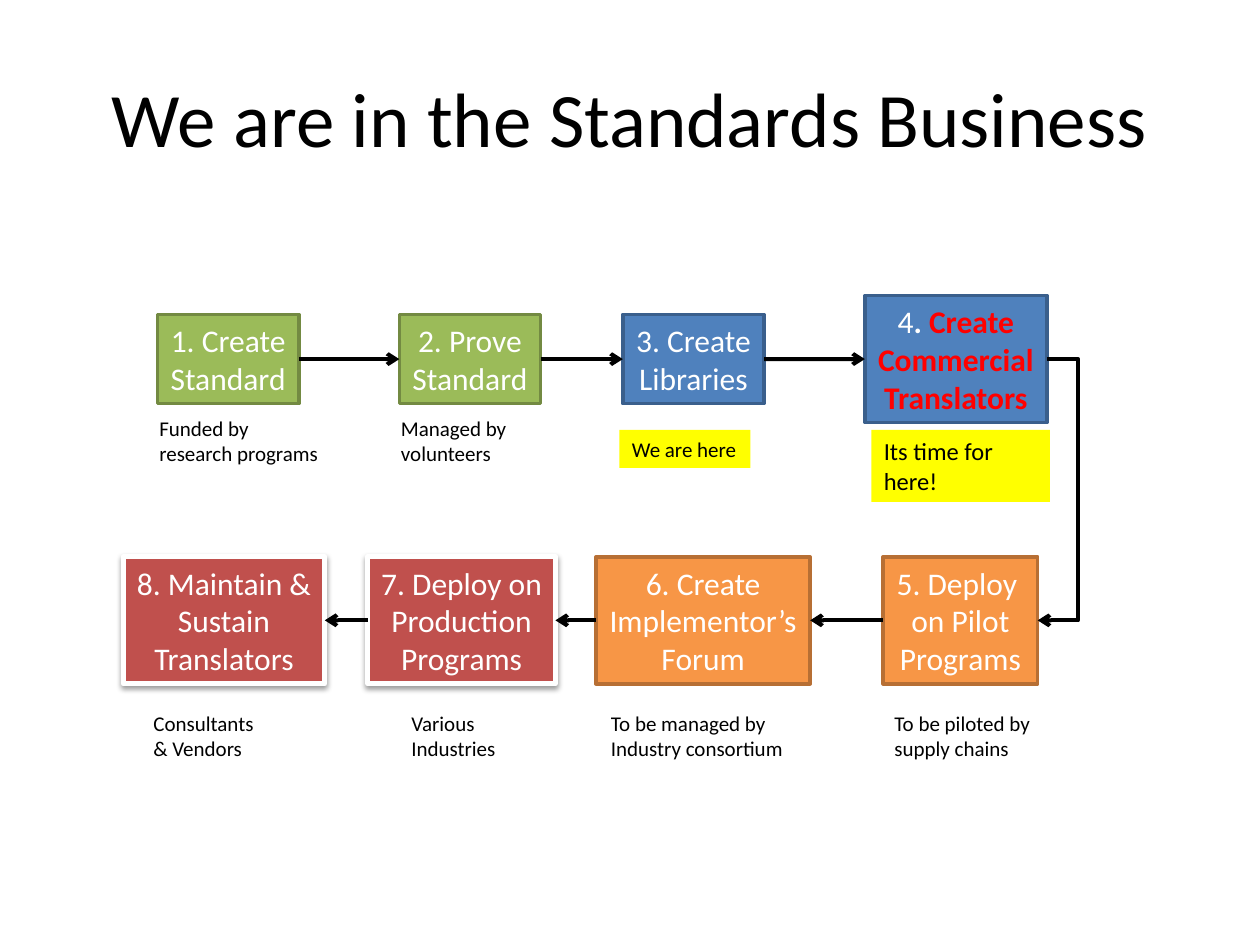
import pptx
import pptx.util
import pptx.dml.color
import pptx.enum.shapes
import pptx.enum.text
import pptx.oxml
import pptx.oxml.ns
from lxml import etree

Pt = pptx.util.Pt
ALIGN = pptx.enum.text.PP_ALIGN
RIGHT, LEFT = 3, 1
STEP_LINE_HEIGHT, STEP_PADDING = 21.7, 7.5
ELBOW_REACH = 18

GREEN = ("9BBB59", "738A42")
BLUE = ("4F81BD", "3A5F8C")
ORANGE = ("F79646", "B76F34")
RED = ("C0504D", "FFFFFF")

# Each step: left, width, text, (fill, line)
UPPER_STEPS = [
    (90, 80.8, "1. Create\nStandard", GREEN),
    (228.2, 80.8, "2. Prove\nStandard", GREEN),
    (355.9, 80.8, "3. Create\nLibraries", BLUE),
    (494.2, 104, "4\nCommercial\nTranslators", BLUE),
]
LOWER_STEPS = [
    (504.6, 88.4, "5. Deploy \non Pilot\nPrograms", ORANGE),
    (340.6, 122.4, "6. Create\nImplementor’s\nForum", ORANGE),
    (210.2, 107.2, "7. Deploy on\nProduction\nPrograms", RED),
    (70.4, 115.2, "8. Maintain &\nSustain\nTranslators", RED),
]
# Each note: left, width, text
UPPER_NOTES = [
    (84, 105.8, "Funded by\nresearch programs"),
    (222, 77.8, "Managed by\nvolunteers"),
]
LOWER_NOTES = [
    (504, 95, "To be piloted by\nsupply chains"),
    (342, 113.8, "To be managed by\nIndustry consortium"),
    (228, 62.6, "Various\nIndustries"),
    (80.6, 72, "Consultants\n& Vendors"),
]


def color(hex_string):
    return pptx.dml.color.RGBColor.from_string(hex_string)


def write(shape, text, size, ink, align, wrap=False):
    frame = shape.text_frame
    frame.text = text
    frame.word_wrap = wrap
    frame.auto_size = pptx.enum.text.MSO_AUTO_SIZE.SHAPE_TO_FIT_TEXT
    for paragraph in frame.paragraphs:
        paragraph.alignment = align
        paragraph.font.name = "Calibri"
        paragraph.font.size = Pt(size)
        paragraph.font.color.rgb = color(ink)


def add_box(slide, left, top, width, height, fill):
    box = slide.shapes.add_shape(pptx.enum.shapes.MSO_SHAPE.RECTANGLE,
                                 Pt(left), Pt(top), Pt(width), Pt(height))
    box.shadow.inherit = False
    box.fill.solid()
    box.fill.fore_color.rgb = color(fill)
    return box


def add_drop_shadow(box):
    effects = box._element.spPr.find(pptx.oxml.ns.qn("a:effectLst"))
    effects.append(pptx.oxml.parse_xml(
        f'<a:outerShdw {pptx.oxml.ns.nsdecls("a")} blurRad="40000" dist="20000" '
        'dir="5400000" rotWithShape="0"><a:srgbClr val="000000">'
        '<a:alpha val="38000"/></a:srgbClr></a:outerShdw>'))


def add_step(slide, left, middle, width, text, colors):
    fill, line = colors
    height = STEP_PADDING + STEP_LINE_HEIGHT * len(text.split("\n"))
    step = add_box(slide, left, middle - height / 2, width, height, fill)
    step.line.color.rgb = color(line)
    step.line.width = Pt(3 if colors == RED else 2)
    if colors == RED:
        add_drop_shadow(step)
    write(step, text, 18, "FFFFFF", ALIGN.CENTER)
    return step


def emphasize(step):
    """Set the words after the step number in bold red."""
    first, *rest = step.text_frame.paragraphs
    for text, ink in ((".", "FFFFFF"), (" Create", "FF0000")):
        run = first.add_run()
        run.text = text
        run.font.bold = True
        run.font.color.rgb = color(ink)
    for paragraph in rest:
        paragraph.font.bold = True
        paragraph.font.color.rgb = color("FF0000")


def add_arrow(slide, start, start_side, end, end_side, elbow=False):
    kinds = pptx.enum.shapes.MSO_CONNECTOR
    arrow = slide.shapes.add_connector(kinds.ELBOW if elbow else kinds.STRAIGHT, 0, 0, 0, 0)
    arrow.begin_connect(start, start_side)
    arrow.end_connect(end, end_side)
    arrow.line.color.rgb = color("000000")
    arrow.line.width = Pt(2.25)
    etree.SubElement(arrow.line._get_or_add_ln(), pptx.oxml.ns.qn("a:tailEnd"), type="arrow")
    properties = arrow._element.spPr
    etree.SubElement(properties, pptx.oxml.ns.qn("a:effectLst"))
    if elbow:
        # The bend lies outside the right edge of the first step
        bend = round(-Pt(ELBOW_REACH) / arrow.width * 100000)
        guides = properties.find(pptx.oxml.ns.qn("a:prstGeom")).get_or_add_avLst()
        etree.SubElement(guides, pptx.oxml.ns.qn("a:gd"), name="adj1", fmla=f"val {bend}")


def add_step_row(slide, middle, steps, start_side, end_side):
    row = [add_step(slide, left, middle, width, text, colors)
           for left, width, text, colors in steps]
    for start, end in zip(row, row[1:]):
        add_arrow(slide, start, start_side, end, end_side)
    return row


def add_notes_row(slide, top, notes):
    for left, width, text in notes:
        note = slide.shapes.add_textbox(Pt(left), Pt(top), Pt(width), Pt(36))
        write(note, text, 12, "000000", ALIGN.LEFT)


def add_highlight(slide, left, top, width, height, text, size, wrap=False):
    highlight = add_box(slide, left, top, width, height, "FFFF00")
    highlight.line.fill.background()
    write(highlight, text, size, "000000", ALIGN.LEFT, wrap)


def add_title(slide, left, top, width, height):
    title = slide.shapes.title
    title.left, title.top, title.width, title.height = map(Pt, (left, top, width, height))
    title.text_frame.text = "We are in the Standards Business"
    heading = title.text_frame.paragraphs[0]
    heading.alignment = ALIGN.CENTER
    heading.font.name = "Calibri"
    heading.font.size = Pt(44)
    heading.font.color.rgb = color("000000")


def main():
    deck = pptx.Presentation()
    deck.slide_width, deck.slide_height = Pt(720), Pt(540)
    slide = deck.slides.add_slide(deck.slide_layouts[5])
    add_title(slide, 36, 21.6, 648, 90)

    # Process steps, left to right and then back
    upper = add_step_row(slide, 205.2, UPPER_STEPS, RIGHT, LEFT)
    lower = add_step_row(slide, 354.5, LOWER_STEPS, LEFT, RIGHT)
    emphasize(upper[-1])
    add_arrow(slide, upper[-1], RIGHT, lower[0], RIGHT, elbow=True)

    # Notes and highlights under the steps
    add_notes_row(slide, 234, UPPER_NOTES)
    add_notes_row(slide, 402.4, LOWER_NOTES)
    add_highlight(slide, 354, 245.6, 74.8, 21.8, "We are here", 12)
    add_highlight(slide, 498, 245.6, 102, 41.2, "Its time for here!", 14, wrap=True)

    deck.save("out.pptx")


if __name__ == "__main__":
    main()
